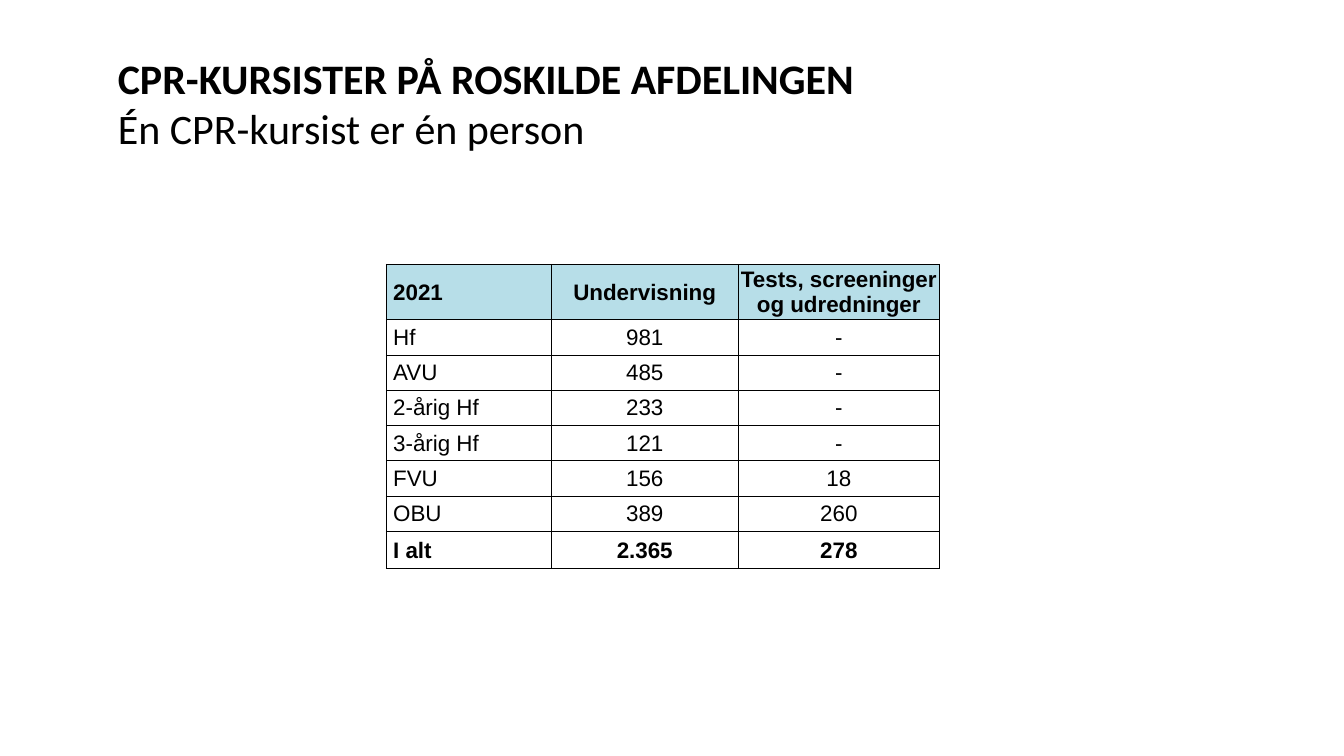
from lxml.etree import SubElement
from pptx import Presentation
from pptx.dml.color import RGBColor
from pptx.enum.text import MSO_ANCHOR, PP_ALIGN
from pptx.oxml.ns import qn
from pptx.util import Inches, Pt

HEADLINE = [("CPR-KURSISTER PÅ ROSKILDE AFDELINGEN", True),
            ("Én CPR-kursist er én person", False)]
ENROLMENT = [
    ("2021", "Undervisning", "Tests, screeninger og udredninger"),
    ("Hf", "981", "-"),
    ("AVU", "485", "-"),
    ("2-årig Hf", "233", "-"),
    ("3-årig Hf", "121", "-"),
    ("FVU", "156", "18"),
    ("OBU", "389", "260"),
    ("I alt", "2.365", "278"),
]
COLUMN_WIDTHS = (1.64, 1.85, 2)
HEADER_HEIGHT, BODY_HEIGHT, TOTAL_HEIGHT = 0.55, 0.35, 0.37
COLORS = {"text": "000000", "border": "000000", "header": "B7DEE8"}


def add_run(paragraph, text, font_name, size, bold):
    run = paragraph.add_run()
    run.text = text
    run.font.name = font_name
    run.font.size = Pt(size)
    run.font.bold = bold
    run.font.color.rgb = RGBColor.from_string(COLORS["text"])


def add_borders(cell):
    properties = cell._tc.get_or_add_tcPr()
    for index, side in enumerate(("a:lnL", "a:lnR", "a:lnT", "a:lnB")):
        line = SubElement(properties, qn(side), w=str(Pt(0.5)))
        fill = SubElement(line, qn("a:solidFill"))
        SubElement(fill, qn("a:srgbClr"), val=COLORS["border"])
        properties.insert(index, line)


def add_headline(slide):
    headline = slide.shapes.add_textbox(Inches(1.07), Inches(0.47), Inches(8.36), Inches(1.11))
    frame = headline.text_frame
    frame.word_wrap = True
    for index, (text, bold) in enumerate(HEADLINE):
        paragraph = frame.add_paragraph() if index else frame.paragraphs[0]
        add_run(paragraph, text, "Calibri", 30, bold)


def add_enrolment(slide):
    last = len(ENROLMENT) - 1
    heights = [HEADER_HEIGHT] + [BODY_HEIGHT] * (last - 1) + [TOTAL_HEIGHT]
    enrolment = slide.shapes.add_table(
        len(ENROLMENT), len(COLUMN_WIDTHS), Inches(3.83), Inches(2.62),
        Inches(sum(COLUMN_WIDTHS)), Inches(sum(heights))).table
    enrolment.horz_banding = False
    enrolment.first_row = False
    for column, width in zip(enrolment.columns, COLUMN_WIDTHS):
        column.width = Inches(width)
    for r, (values, height) in enumerate(zip(ENROLMENT, heights)):
        enrolment.rows[r].height = Inches(height)
        for c, value in enumerate(values):
            cell = enrolment.cell(r, c)
            cell.vertical_anchor = MSO_ANCHOR.MIDDLE
            cell.margin_left = Inches(0.01 if c else 0.07)
            cell.margin_right = cell.margin_top = Inches(0.01)
            cell.margin_bottom = 0
            if r == 0:
                cell.fill.solid()
                cell.fill.fore_color.rgb = RGBColor.from_string(COLORS["header"])
            else:
                cell.fill.background()
            add_borders(cell)
            paragraph = cell.text_frame.paragraphs[0]
            paragraph.alignment = PP_ALIGN.CENTER if c else PP_ALIGN.LEFT
            add_run(paragraph, value, "Arial", 16, r in (0, last))


def main():
    presentation = Presentation()
    presentation.slide_width = Inches(13.33)
    presentation.slide_height = Inches(7.5)
    slide = presentation.slides.add_slide(presentation.slide_layouts[6])
    add_headline(slide)
    add_enrolment(slide)
    presentation.save("out.pptx")


if __name__ == "__main__":
    main()
